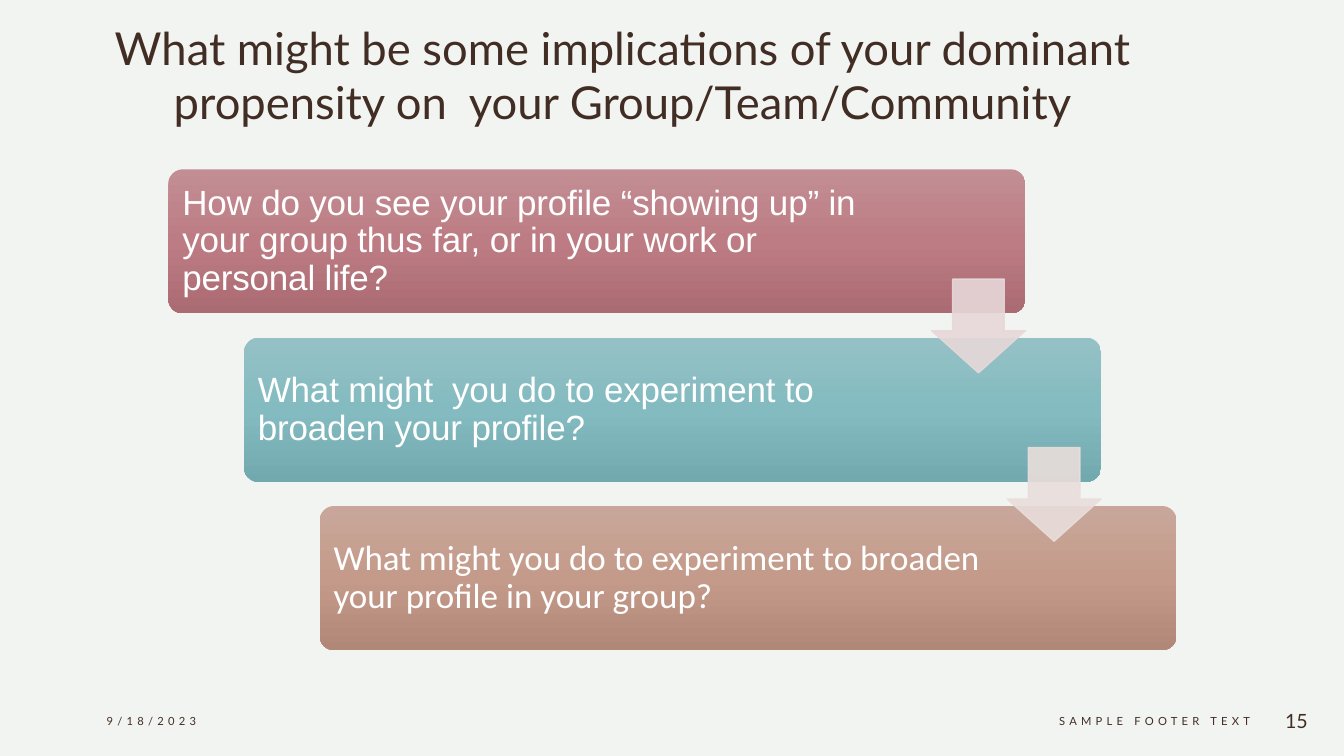
from dataclasses import dataclass

from lxml.etree import SubElement
from pptx import Presentation
from pptx.dml.color import RGBColor
from pptx.enum.shapes import MSO_SHAPE
from pptx.enum.text import MSO_ANCHOR, MSO_AUTO_SIZE, PP_ALIGN
from pptx.oxml.ns import qn
from pptx.util import Inches, Pt


@dataclass(frozen=True)
class Theme:
    background: str = "F2F4F1"
    dark: str = "412D24"
    light: str = "FFFFFF"
    font: str = "Lato"
    title_size: float = 32.4
    question_size: float = 25
    footer_size: float = 8
    number_size: float = 14
    card_gradients: tuple = (
        ("C28E94", "BD7C84", "AB6B72"),
        ("94C1C5", "83BBC0", "71A9AE"),
        ("C8A79A", "C49B8A", "B18878"),
    )
    arrows: tuple = ("E7D8D9", "E9DEDB")
    arrow_opacity: int = 90


THEME = Theme()
STEP_X, STEP_Y = 0.75, 1.67
QUESTIONS = (
    ("How do you see your profile “showing up” in your group thus far, "
     "or in your work or personal life?", "Arial", -0.1, 6.95),
    ("What might  you do to experiment to broaden your profile?",
     "Arial", -0.1, 6.74),
    ("What might you do to experiment to broaden your profile in your group?",
     "Calibri", 0, 6.74),
)


def add_run(p, text, size, color, font=THEME.font, spacing=0):
    r = p.add_run()
    r.text = text
    r.font.size = Pt(size)
    r.font.name = font
    r.font.color.rgb = RGBColor.from_string(color)
    if spacing:
        r.font._element.set("spc", str(round(spacing * 100)))


def add_text(s, box, text, size, color, align=PP_ALIGN.LEFT, **run_format):
    tf = s.shapes.add_textbox(*map(Inches, box)).text_frame
    tf.word_wrap = True
    tf.vertical_anchor = MSO_ANCHOR.MIDDLE
    p = tf.paragraphs[0]
    p.alignment = align
    add_run(p, text, size, color, **run_format)
    return tf


def set_title(s, text):
    sp = s.shapes.title
    sp.left, sp.top = Inches(0.68), Inches(0.15)
    sp.width, sp.height = Inches(10.99), Inches(1.53)
    tf = sp.text_frame
    tf.word_wrap = True
    tf.auto_size = MSO_AUTO_SIZE.NONE
    tf.vertical_anchor = MSO_ANCHOR.TOP
    p = tf.paragraphs[0]
    p.alignment = PP_ALIGN.CENTER
    add_run(p, text, THEME.title_size, THEME.dark)


def set_gradient(sp, colors):
    sp.fill.gradient()
    sp.fill.gradient_angle = 270
    stops = sp._element.spPr.find(qn("a:gradFill")).find(qn("a:gsLst"))
    for stop in list(stops):
        stops.remove(stop)
    for position, color in zip((0, 50000, 100000), colors):
        stop = SubElement(stops, qn("a:gs"), pos=str(position))
        SubElement(stop, qn("a:srgbClr"), val=color)


def add_card(s, index, question, colors):
    text, font, spacing, text_width = question
    left, top = 1.67 + index * STEP_X, 1.68 + index * STEP_Y
    sp = s.shapes.add_shape(MSO_SHAPE.ROUNDED_RECTANGLE, Inches(left),
                            Inches(top), Inches(8.5), Inches(1.43))
    sp.adjustments[0] = 0.1
    sp.shadow.inherit = False
    sp.line.fill.background()
    set_gradient(sp, colors)
    tf = add_text(s, (left + 0.04, top + 0.04, text_width, 1.35), text,
                  THEME.question_size, THEME.light, font=font, spacing=spacing)
    tf.margin_left = tf.margin_right = Inches(0.1)
    tf.margin_top = tf.margin_bottom = Inches(0.1)
    tf.paragraphs[0].line_spacing = 0.9


def add_arrow(s, index, color):
    sp = s.shapes.add_shape(MSO_SHAPE.DOWN_ARROW,
                            Inches(9.24 + index * STEP_X),
                            Inches(2.77 + index * STEP_Y),
                            Inches(0.93), Inches(0.93))
    sp.adjustments[0], sp.adjustments[1] = 0.55, 0.45
    sp.shadow.inherit = False
    sp.fill.solid()
    sp.line.width = Pt(1)
    for paint in (sp.fill.fore_color, sp.line.color):
        paint.rgb = RGBColor.from_string(color)
    for clr in sp._element.spPr.iter(qn("a:srgbClr")):
        SubElement(clr, qn("a:alpha"), val=str(THEME.arrow_opacity * 1000))


def add_footer(s):
    add_text(s, (0.96, 6.95, 3, 0.4), "9/18/2023",
             THEME.footer_size, THEME.dark, spacing=3)
    add_text(s, (7.8, 6.95, 4.7, 0.4), "SAMPLE FOOTER TEXT",
             THEME.footer_size, THEME.dark, PP_ALIGN.RIGHT, spacing=3)
    add_text(s, (12.5, 6.95, 0.57, 0.4), "15",
             THEME.number_size, THEME.dark, PP_ALIGN.RIGHT)


def main():
    prs = Presentation()
    prs.slide_width, prs.slide_height = Inches(13.33), Inches(7.5)
    s = prs.slides.add_slide(prs.slide_layouts[5])
    s.background.fill.solid()
    s.background.fill.fore_color.rgb = RGBColor.from_string(THEME.background)
    set_title(s, "What might be some implications of your dominant "
                 "propensity on  your Group/Team/Community")
    add_footer(s)
    for i, (question, colors) in enumerate(zip(QUESTIONS, THEME.card_gradients)):
        add_card(s, i, question, colors)
    for i, color in enumerate(THEME.arrows):
        add_arrow(s, i, color)
    prs.save("out.pptx")


if __name__ == "__main__":
    main()
